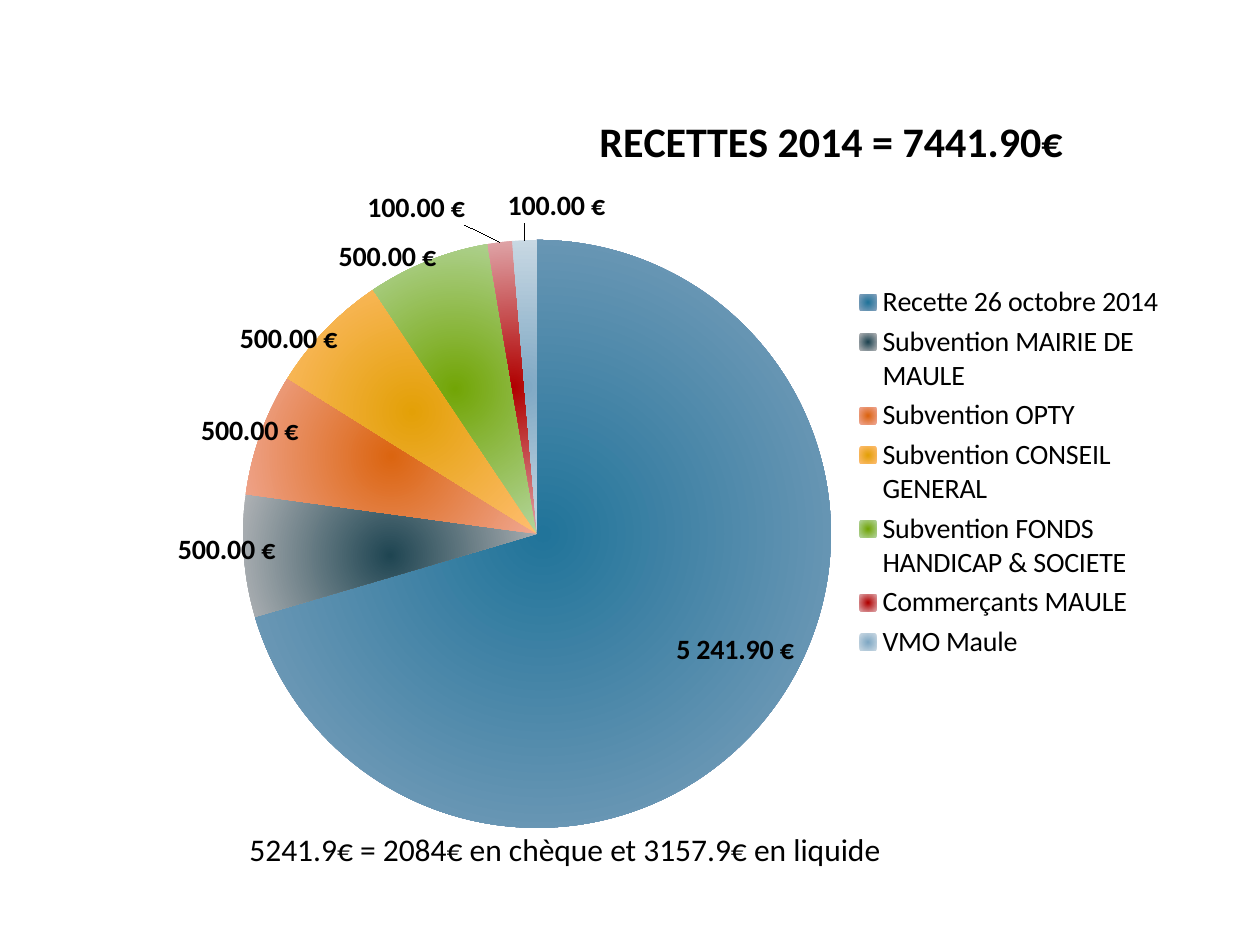
"""Build the 2014 income slide with its pie chart."""
from pptx import Presentation
from pptx.chart.data import CategoryChartData
from pptx.dml.color import RGBColor
from pptx.enum.chart import XL_CHART_TYPE, XL_LABEL_POSITION, XL_LEGEND_POSITION
from pptx.oxml import parse_xml
from pptx.oxml.ns import nsdecls, qn
from pptx.util import Pt

PX = 914400 // 126
THEME = {
    "font": "Calibri", "text": RGBColor(0, 0, 0),
    "title": Pt(24), "note": Pt(18), "label": Pt(16),
}
FMT = r"#\ ##0.00\ [$€-1]"
LEFT, TOP, WIDTH, HEIGHT = 102, 78, 1074, 785

# category, value, centre colour, rim colour, label shift in px
SLICES = [
    ("Recette 26 octobre 2014", 5241.9, "21749A", "85A3BE", (-102, -81)),
    ("Subvention MAIRIE DE MAULE", 500, "1F4552", "B0B3B6", (39, -6)),
    ("Subvention OPTY", 500, "DB6510", "F0A792", (45, 17)),
    ("Subvention CONSEIL GENERAL", 500, "E3A007", "FFBD70", (17, 32)),
    ("Subvention FONDS HANDICAP & SOCIETE", 500, "72A506", "B4D59C", (11, 20)),
    ("Commerçants MAULE", 100, "B00000", "DFA5A8", (-34, -10)),
    ("VMO Maule", 100, "7FA8C4", "C8D8E3", (29, -9)),
]


def style(font, size, bold=False):
    font.name, font.size, font.bold = THEME["font"], size, bold
    font.color.rgb = THEME["text"]


def place(parent, index, x, y, w=0, h=0, edge=True, inner=False):
    for old in parent.findall(qn("c:layout")):
        parent.remove(old)
    parts = [("layoutTarget", "inner")] if inner else []
    parts += [("xMode", "edge"), ("yMode", "edge")] if edge else []
    parts += [("x", round(x / WIDTH, 4)), ("y", round(y / HEIGHT, 4))]
    parts += [("w", round(w / WIDTH, 4)), ("h", round(h / HEIGHT, 4))] if w else []
    body = "".join(f'<c:{tag} val="{val}"/>' for tag, val in parts)
    parent.insert(index, parse_xml(
        f'<c:layout {nsdecls("c")}><c:manualLayout>{body}</c:manualLayout></c:layout>'))


prs = Presentation()
prs.slide_width, prs.slide_height = 1260 * PX, 945 * PX
s = prs.slides.add_slide(prs.slide_layouts[6])

data = CategoryChartData(number_format=FMT)
data.categories = [row[0] for row in SLICES]
data.add_series("Series 1", [row[1] for row in SLICES])
chart = s.shapes.add_chart(XL_CHART_TYPE.PIE, LEFT * PX, TOP * PX,
                           WIDTH * PX, HEIGHT * PX, data).chart
style(chart.font, Pt(10))

chart.has_title = True
tf = chart.chart_title.text_frame
tf.text = "RECETTES 2014 = 7441.90€"
style(tf.paragraphs[0].runs[0].font, THEME["title"], True)

chart.has_legend = True
chart.legend.position = XL_LEGEND_POSITION.RIGHT
chart.legend.include_in_layout = False
style(chart.legend.font, THEME["label"])

root = chart._chartSpace
place(root.find(".//" + qn("c:title")), 1, 490, 28)
place(root.find(".//" + qn("c:legend")), 1, 748, 202, 318, 385)
place(root.find(".//" + qn("c:plotArea")), 0, 141, 162, 588, 588, inner=True)

plot = chart.plots[0]
plot.vary_by_categories = True
series = plot.series[0]
labels = series.data_labels
labels.show_value = True
labels.number_format, labels.number_format_is_linked = FMT, False
labels.position = XL_LABEL_POSITION.OUTSIDE_END
style(labels.font, THEME["label"], True)

for i, (_, _, centre, rim, shift) in enumerate(SLICES):
    point = series.points[i]
    fill = point.format.fill
    fill.solid()
    sp_pr = point.format._element if hasattr(point.format, "_element") else None
    sp_pr = series._element.findall(qn("c:dPt"))[i].find(qn("c:spPr"))
    sp_pr.replace(sp_pr.find(qn("a:solidFill")), parse_xml(
        f'<a:gradFill {nsdecls("a")} rotWithShape="1"><a:gsLst>'
        f'<a:gs pos="0"><a:srgbClr val="{centre}"/></a:gs>'
        f'<a:gs pos="100000"><a:srgbClr val="{rim}"/></a:gs></a:gsLst>'
        '<a:path path="circle"><a:fillToRect l="50000" t="50000" r="50000" b="50000"/>'
        '</a:path></a:gradFill>'))
    point.format.line.fill.background()
    label = point.data_label
    style(label.font, THEME["label"], True)
    label.position = XL_LABEL_POSITION.OUTSIDE_END
    place(labels._element.findall(qn("c:dLbl"))[i], 1, *shift, edge=False)

tf = s.shapes.add_textbox(237 * PX, 824 * PX, 893 * PX, 50 * PX).text_frame
tf.word_wrap = True
tf.text = "5241.9€ = 2084€ en chèque et 3157.9€ en liquide"
style(tf.paragraphs[0].runs[0].font, THEME["note"])

prs.save("out.pptx")
